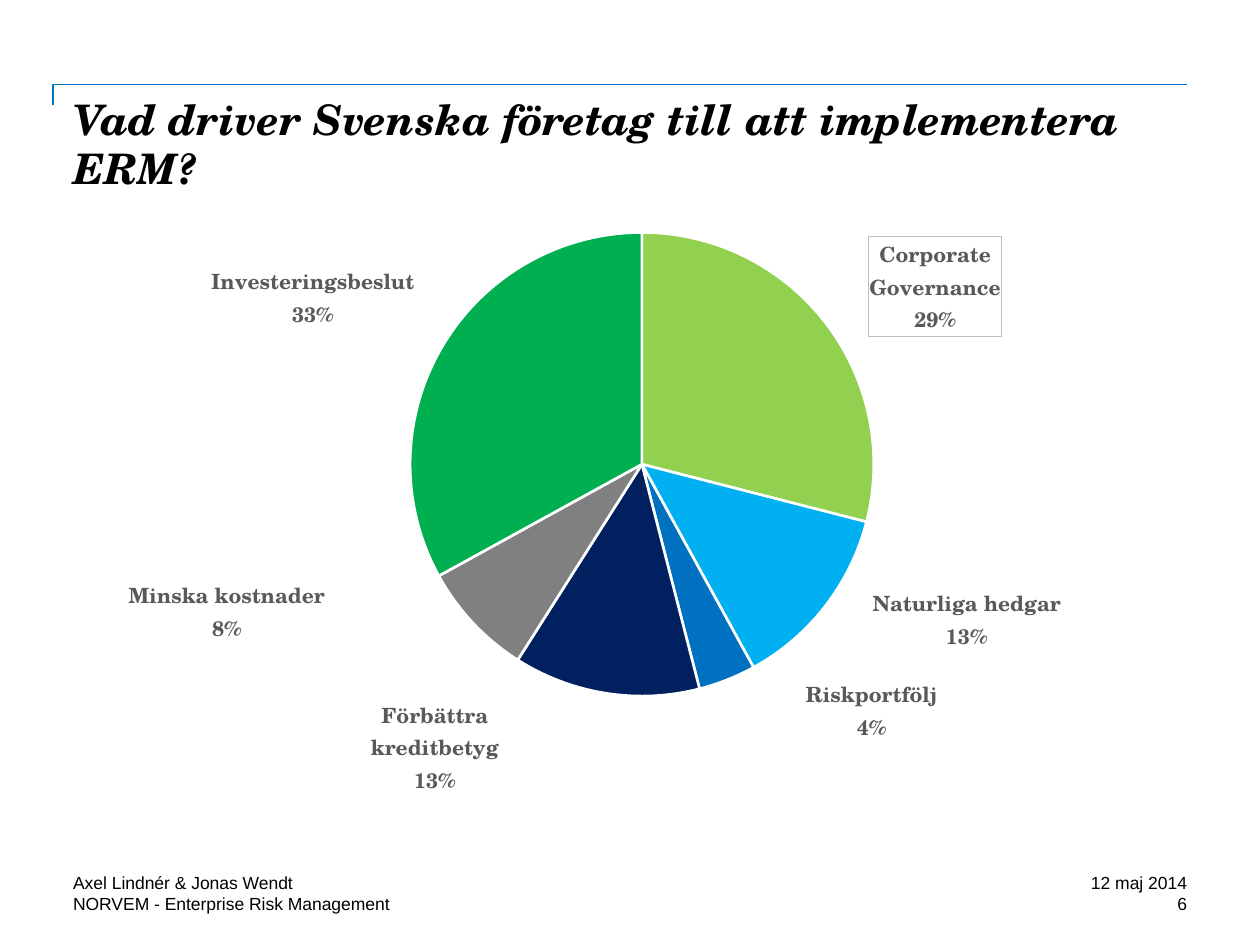
from copy import deepcopy
from dataclasses import dataclass

from pptx import Presentation
from pptx.chart.data import CategoryChartData
from pptx.dml.color import RGBColor
from pptx.enum.chart import XL_CHART_TYPE, XL_LABEL_POSITION
from pptx.enum.text import MSO_ANCHOR, PP_ALIGN
from pptx.oxml import parse_xml
from pptx.oxml.ns import nsdecls, qn
from pptx.util import Inches, Pt

PIE = XL_CHART_TYPE.PIE
OUTSIDE_END = XL_LABEL_POSITION.OUTSIDE_END
TOP, BOTTOM = MSO_ANCHOR.TOP, MSO_ANCHOR.BOTTOM
LEFT, RIGHT = PP_ALIGN.LEFT, PP_ALIGN.RIGHT
TITLE_ONLY = 5


@dataclass(frozen=True)
class Theme:
    heading_font: str = "TeX Gyre Schola"
    body_font: str = "Arial"
    title_size: int = 24
    title_leading: int = 28
    label_size: int = 12
    body_size: int = 10
    text: str = "000000"
    label: str = "595959"
    frame: str = "BFBFBF"
    rule: str = "0070C0"
    white: str = "FFFFFF"


THEME = Theme()

# driver, percent, slice colour, label shift in inches (right, down)
DRIVERS = [
    ("Corporate Governance", 29, "92D050", (0.30, 0.15)),
    ("Naturliga hedgar", 13, "00B0F0", (0.33, -0.19)),
    ("Riskportfölj", 4, "0070C0", (0.60, -0.07)),
    ("Förbättra kreditbetyg", 13, "002060", (-0.84, -0.02)),
    ("Minska kostnader", 8, "808080", (-1.13, -0.39)),
    ("Investeringsbeslut", 33, "00B050", (-0.17, -0.10)),
]
FRAMED_DRIVER = "Corporate Governance"


def style_font(font, name, size, color, bold=False, italic=False):
    font.name, font.size = name, Pt(size)
    font.bold, font.italic = bold, italic
    font.color.rgb = RGBColor.from_string(color)


def write_text(shape, text, font=THEME.body_font, size=THEME.body_size,
               color=THEME.text, bold=False, italic=False, align=LEFT,
               anchor=TOP, leading=None):
    frame = shape.text_frame
    frame.word_wrap = True
    frame.vertical_anchor = anchor
    frame.margin_left = frame.margin_right = 0
    frame.margin_top = frame.margin_bottom = 0
    paragraph = frame.paragraphs[0]
    paragraph.alignment = align
    if leading:
        paragraph.line_spacing = Pt(leading)
    run = paragraph.add_run()
    run.text = text
    style_font(run.font, font, size, color, bold, italic)


def add_header_rule(slide, left, top, width, height):
    """Draw the top rule with its short drop at the left end."""
    outline = slide.shapes.build_freeform(Inches(left), Inches(top + height))
    outline.add_line_segments(
        [(Inches(left), Inches(top)), (Inches(left + width), Inches(top))],
        close=False)
    rule = outline.convert_to_shape()
    rule.shadow.inherit = False
    rule.fill.background()
    rule.line.color.rgb = RGBColor.from_string(THEME.rule)
    rule.line.width = Pt(1)


def add_title(slide, left, top, width, height):
    title = slide.shapes.title
    title.left, title.top = Inches(left), Inches(top)
    title.width, title.height = Inches(width), Inches(height)
    write_text(title, "Vad driver Svenska företag till att implementera ERM?",
               font=THEME.heading_font, size=THEME.title_size, bold=True,
               italic=True, leading=THEME.title_leading)


def manual_layout(x, y, extent=""):
    return (f'<c:layout {nsdecls("c")}><c:manualLayout>{extent}'
            f'<c:x val="{x:.4f}"/><c:y val="{y:.4f}"/>')


def place_plot(chart, x, y, width, height):
    """Fix the pie's square as fractions of the chart area."""
    plot_area = chart.plots[0]._element.getparent()
    for layout in plot_area.findall(qn("c:layout")):
        plot_area.remove(layout)
    modes = ('<c:layoutTarget val="inner"/><c:xMode val="edge"/>'
             '<c:yMode val="edge"/>')
    plot_area.insert(0, parse_xml(
        manual_layout(x, y, modes)
        + f'<c:w val="{width:.4f}"/><c:h val="{height:.4f}"/>'
        '</c:manualLayout></c:layout>'))


def label_frame():
    return parse_xml(
        f'<c:spPr {nsdecls("c", "a")}><a:noFill/><a:ln w="9525"><a:solidFill>'
        f'<a:srgbClr val="{THEME.frame}"/></a:solidFill></a:ln></c:spPr>')


def shift_labels(labels, width, height):
    """Give each slice a label moved from its usual place."""
    shared = labels._element
    settings = [part for part in shared
                if part.tag != qn("c:showLeaderLines")]
    for index, (driver, _, _, (right, down)) in enumerate(DRIVERS):
        label = parse_xml(f'<c:dLbl {nsdecls("c")}><c:idx val="{index}"/>'
                          '</c:dLbl>')
        label.append(parse_xml(manual_layout(right / width, down / height)
                               + '</c:manualLayout></c:layout>'))
        for part in settings:
            if part.tag == qn("c:txPr") and driver == FRAMED_DRIVER:
                label.append(label_frame())
            label.append(deepcopy(part))
        shared.insert(index, label)


def add_driver_pie(slide, left, top, width, height):
    data = CategoryChartData()
    data.categories = [driver for driver, *_ in DRIVERS]
    data.add_series("Series 1", [percent for _, percent, *_ in DRIVERS])
    chart = slide.shapes.add_chart(
        PIE, Inches(left), Inches(top), Inches(width), Inches(height),
        data).chart
    chart.has_legend = chart.has_title = False
    style_font(chart.font, THEME.body_font, THEME.body_size, THEME.text)
    chart.plots[0].vary_by_categories = True
    diameter = 3.68
    place_plot(chart, 0.303, 0.103, diameter / width, diameter / height)

    series = chart.plots[0].series[0]
    for index, (_, _, color, _) in enumerate(DRIVERS):
        piece = series.points[index].format
        piece.fill.solid()
        piece.fill.fore_color.rgb = RGBColor.from_string(color)
        piece.line.color.rgb = RGBColor.from_string(THEME.white)
        piece.line.width = Pt(1.5)

    labels = series.data_labels
    labels.show_category_name = labels.show_percentage = True
    labels.show_value = False
    labels.number_format, labels.number_format_is_linked = "0%", False
    labels.position = OUTSIDE_END
    style_font(labels.font, THEME.heading_font, THEME.label_size, THEME.label,
               bold=True)
    separator = parse_xml(f'<c:separator {nsdecls("c")}>\n</c:separator>')
    labels._element.find(qn("c:showBubbleSize")).addnext(separator)
    for leader in labels._element.findall(qn("c:showLeaderLines")):
        leader.set("val", "0")
    shift_labels(labels, width, height)


def add_footer(slide, left, top, width, row_height):
    """Write two rows, each with one text at the left and one at the right."""
    rows = [
        ("Axel Lindnér & Jonas Wendt", "12 maj 2014", BOTTOM),
        ("NORVEM - Enterprise Risk Management", "6", TOP),
    ]
    right_width = 1.67
    columns = [(left, 5.75, LEFT),
               (left + width - right_width, right_width, RIGHT)]
    for row, (*texts, left_anchor) in enumerate(rows):
        for text, (x, box_width, align), anchor in zip(
                texts, columns, (left_anchor, TOP)):
            box = slide.shapes.add_textbox(
                Inches(x), Inches(top + row * row_height),
                Inches(box_width), Inches(row_height))
            write_text(box, text, align=align, anchor=anchor)


def main():
    deck = Presentation()
    deck.slide_width, deck.slide_height = Inches(10), Inches(7.5)
    slide = deck.slides.add_slide(deck.slide_layouts[TITLE_ONLY])
    add_header_rule(slide, 0.42, 0.67, 9, 0.16)
    add_title(slide, 0.58, 0.75, 8.83, 1)
    add_driver_pie(slide, 0.58, 1.31, 8.83, 5.2)
    add_footer(slide, 0.58, 6.92, 8.84, 0.17)
    deck.save("out.pptx")


if __name__ == "__main__":
    main()
